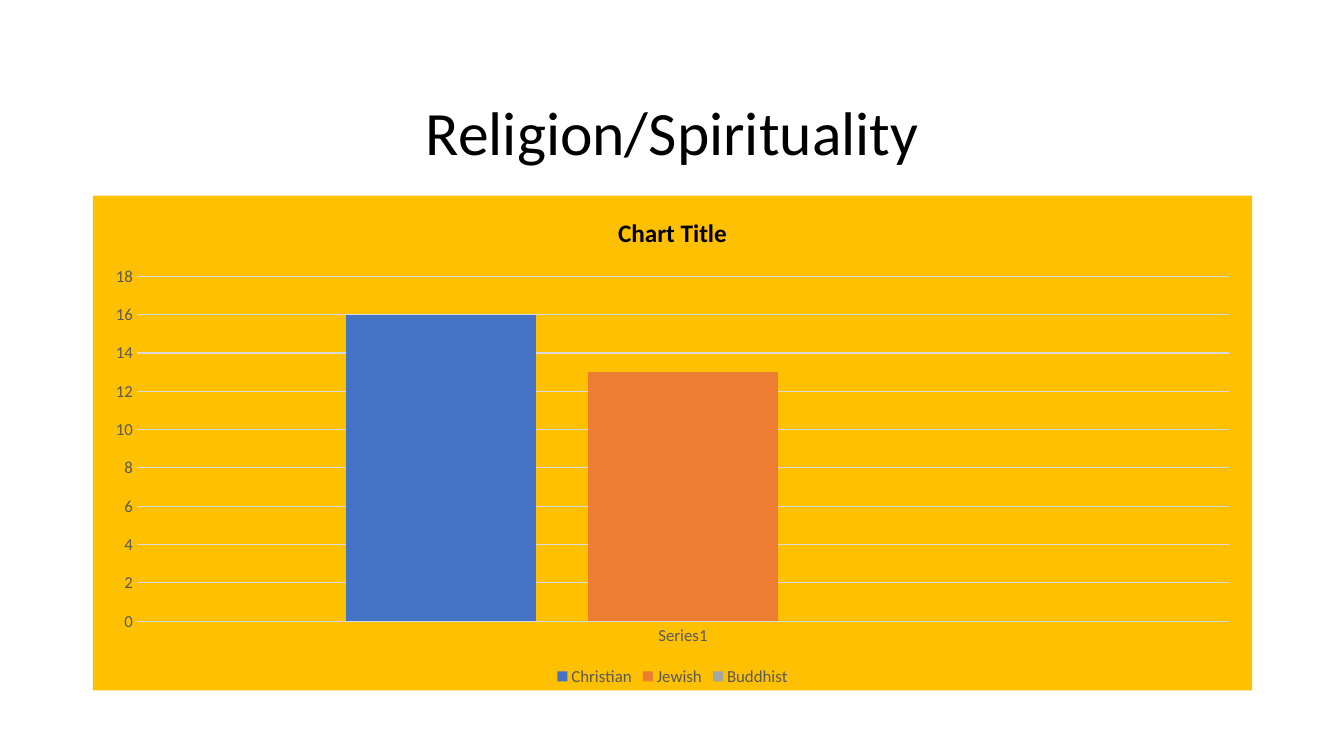
from lxml.etree import SubElement
from pptx import Presentation
from pptx.chart.data import CategoryChartData
from pptx.dml.color import RGBColor
from pptx.enum.chart import XL_CHART_TYPE, XL_LEGEND_POSITION, XL_TICK_MARK
from pptx.enum.text import MSO_ANCHOR, MSO_AUTO_SIZE, PP_ALIGN
from pptx.oxml import parse_xml
from pptx.oxml.ns import nsdecls, qn
from pptx.util import Inches, Pt

FONT = "Calibri"
COLORS = {
    "text": "000000",
    "label": "595959",
    "grid": "D9D9D9",
    "panel": "FFC000",
    "Christian": "4472C4",
    "Jewish": "ED7D31",
    "Buddhist": "A5A5A5",
}
FAITHS = {"Christian": 16, "Jewish": 13, "Buddhist": None}


def rgb(name):
    return RGBColor.from_string(COLORS[name])


def style_font(font, size, color, bold=False):
    font.name = FONT
    font.size = Pt(size)
    font.bold = bold
    font.color.rgb = rgb(color)


def style_line(line):
    line.color.rgb = rgb("grid")
    line.width = Pt(0.75)


def fill_panel(chart):
    sp_pr = parse_xml(f"<c:spPr {nsdecls('c', 'a')}/>")
    fill = SubElement(sp_pr, qn("a:solidFill"))
    SubElement(fill, qn("a:srgbClr"), val=COLORS["panel"])
    line = SubElement(sp_pr, qn("a:ln"))
    SubElement(line, qn("a:noFill"))
    chart.element.find(qn("c:chart")).addnext(sp_pr)


def add_title(s, text, left, top, width, height):
    sp = s.shapes.title
    sp.left, sp.top, sp.width, sp.height = map(Inches, (left, top, width, height))
    tf = sp.text_frame
    tf.auto_size = MSO_AUTO_SIZE.NONE
    tf.vertical_anchor = MSO_ANCHOR.MIDDLE
    p = tf.paragraphs[0]
    p.alignment = PP_ALIGN.CENTER
    p.line_spacing = 0.9
    r = p.add_run()
    r.text = text
    style_font(r.font, 44, "text")


def add_faith_chart(s, left, top, width, height):
    data = CategoryChartData()
    data.categories = ["Series1"]
    for faith, count in FAITHS.items():
        data.add_series(faith, [count])
    box = map(Inches, (left, top, width, height))
    chart = s.shapes.add_chart(XL_CHART_TYPE.COLUMN_CLUSTERED, *box, data).chart
    style_font(chart.font, 10, "text")
    fill_panel(chart)

    chart.has_title = True
    r = chart.chart_title.text_frame.paragraphs[0].add_run()
    r.text = "Chart Title"
    style_font(r.font, 18, "text", bold=True)

    chart.has_legend = True
    chart.legend.position = XL_LEGEND_POSITION.BOTTOM
    chart.legend.include_in_layout = False
    style_font(chart.legend.font, 12, "label")

    for axis in (chart.category_axis, chart.value_axis):
        axis.major_tick_mark = XL_TICK_MARK.NONE
        axis.minor_tick_mark = XL_TICK_MARK.NONE
        style_font(axis.tick_labels.font, 12, "label")
    style_line(chart.category_axis.format.line)
    chart.value_axis.format.line.fill.background()
    chart.value_axis.has_major_gridlines = True
    style_line(chart.value_axis.major_gridlines.format.line)

    plot = chart.plots[0]
    plot.vary_by_categories = False
    plot.gap_width = 219
    plot.overlap = -27
    for series in plot.series:
        series.format.fill.solid()
        series.format.fill.fore_color.rgb = rgb(series.name)


def main():
    prs = Presentation()
    prs.slide_width = Inches(13.33)
    prs.slide_height = Inches(7.5)
    s = prs.slides.add_slide(prs.slide_layouts[5])
    add_title(s, "Religion/Spirituality", 0.92, 0.74, 11.5, 1.2)
    add_faith_chart(s, 0.92, 1.94, 11.5, 4.91)
    prs.save("out.pptx")


if __name__ == "__main__":
    main()
